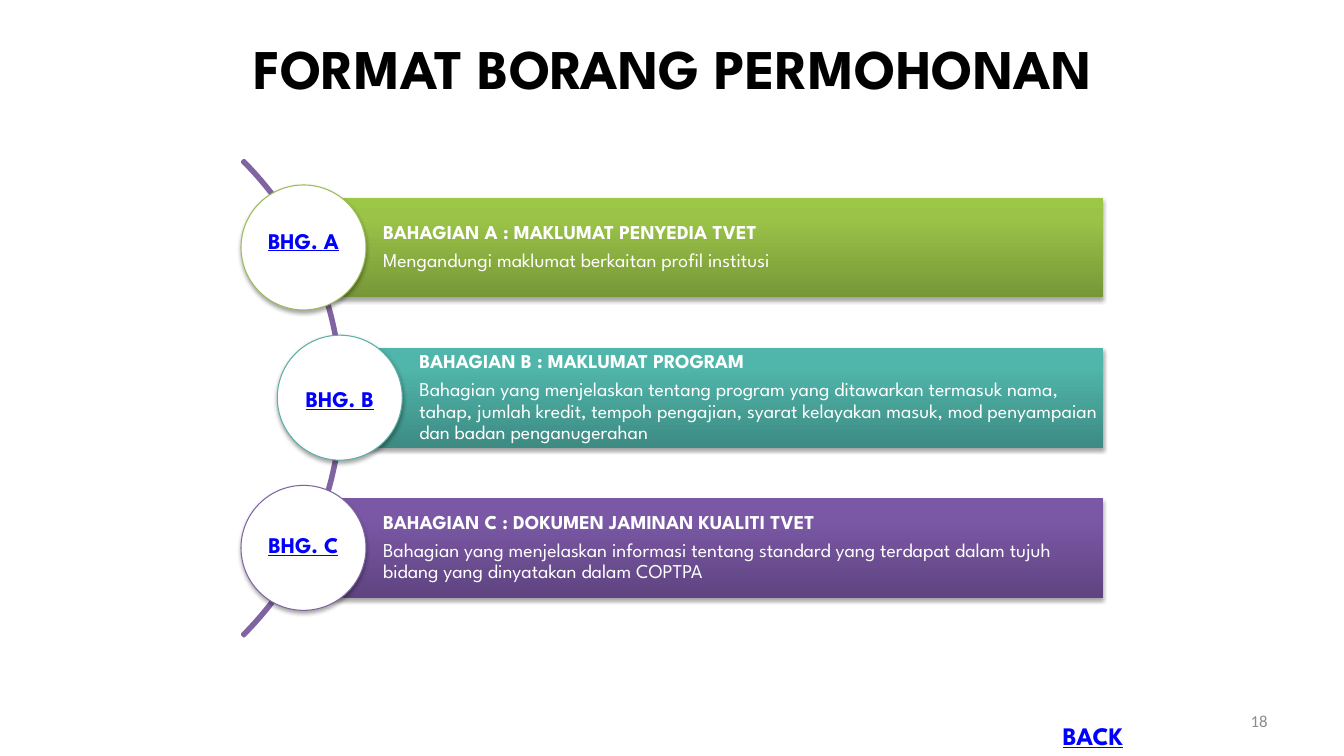
"""Build the slide that outlines the three parts of the application form."""
import copy

import pptx
import pptx.dml.color
import pptx.enum.shapes
import pptx.enum.text
import pptx.oxml
import pptx.oxml.ns
import pptx.util

SLIDE_WIDTH = pptx.util.Inches(13.33)
SLIDE_HEIGHT = pptx.util.Inches(7.5)
HEADING_FONT = "League Spartan"
COLOURS = {
    "black": "000000",
    "white": "FFFFFF",
    "link": "0000FF",
    "number": "8C8C8C",
    "arc": "8064A2",
}
SHAPE = pptx.enum.shapes.MSO_SHAPE
ALIGN = pptx.enum.text.PP_ALIGN
ANCHOR = pptx.enum.text.MSO_ANCHOR

BAR_RIGHT = 82.07
BAR_HEIGHT = 13.2
FIRST_MIDDLE = 32.73
ROW_PITCH = 19.87
CIRCLE_WIDTH, CIRCLE_HEIGHT = 9.3, 16.53
LABEL_WIDTH, LABEL_HEIGHT = 7.5, 6.27

SECTIONS = [
    {
        "label": "BHG. A",
        "heading": "BAHAGIAN A : MAKLUMAT PENYEDIA TVET",
        "detail": "Mengandungi maklumat berkaitan profil institusi",
        "left": 22.58,
        "label_middle": 31.8,
        "gradient": ["779737", "9BC348", "9DC746"],
        "outline": "9BBB59",
    },
    {
        "label": "BHG. B",
        "heading": "BAHAGIAN B : MAKLUMAT PROGRAM",
        "detail": "Bahagian yang menjelaskan tentang program yang ditawarkan "
                  "termasuk nama, tahap, jumlah kredit, tempoh pengajian, syarat "
                  "kelayakan masuk, mod penyampaian dan badan penganugerahan",
        "left": 25.28,
        "label_middle": 52.73,
        "gradient": ["3D8B83", "50B5AA", "4EB8AC"],
        "outline": "5EAFA6",
    },
    {
        "label": "BHG. C",
        "heading": "BAHAGIAN C : DOKUMEN JAMINAN KUALITI TVET",
        "detail": "Bahagian yang menjelaskan informasi tentang standard yang "
                  "terdapat dalam tujuh bidang yang dinyatakan dalam COPTPA",
        "left": 22.58,
        "label_middle": 72.07,
        "gradient": ["5F4480", "7B58A6", "7C57A8"],
        "outline": "8064A2",
    },
]


def rgb(value):
    """Turn a hex string into a colour."""
    return pptx.dml.color.RGBColor.from_string(value)


def place(left, top, width, height):
    """Turn percentages of the slide into a position and size."""
    return (int(SLIDE_WIDTH * left / 100), int(SLIDE_HEIGHT * top / 100),
            int(SLIDE_WIDTH * width / 100), int(SLIDE_HEIGHT * height / 100))


def format_runs(paragraph, size, colour, bold=False, underline=None, font=HEADING_FONT):
    """Format every run of a paragraph."""
    for run in paragraph.runs:
        run.font.name = font
        run.font.size = pptx.util.Pt(size)
        run.font.bold = bold
        run.font.underline = underline
        run.font.color.rgb = rgb(colour)


def add_shadow(shape):
    """Give a shape a soft shadow straight below it."""
    shape.shadow.inherit = False
    effects = shape._element.spPr.find(pptx.oxml.ns.qn("a:effectLst"))
    effects.append(pptx.oxml.parse_xml(
        f'<a:outerShdw {pptx.oxml.ns.nsdecls("a")} blurRad="39370" dist="22860" '
        f'dir="5400000" rotWithShape="0"><a:srgbClr val="{COLOURS["black"]}">'
        '<a:alpha val="35000"/></a:srgbClr></a:outerShdw>'))


def fill_gradient(shape, colours):
    """Fill a shape from bottom to top with three colours."""
    shape.fill.gradient()
    shape.fill.gradient_angle = 90
    stop_list = shape._element.spPr.find(".//" + pptx.oxml.ns.qn("a:gsLst"))
    stop_list.append(copy.deepcopy(stop_list[-1]))
    for stop, position, colour in zip(shape.fill.gradient_stops, (0, 0.8, 1), colours):
        stop.position = position
        stop.color.rgb = rgb(colour)


def add_title(slide, wording):
    """Fill the title placeholder."""
    title = slide.shapes.title
    title.left, title.top, title.width, title.height = place(12.53, 1.87, 75.02, 14.13)
    title.text_frame.text = wording
    title.text_frame.vertical_anchor = ANCHOR.MIDDLE
    heading = title.text_frame.paragraphs[0]
    heading.alignment = ALIGN.CENTER
    format_runs(heading, 40, COLOURS["black"], bold=True)


def add_text(slide, wording, box, align, anchor=ANCHOR.MIDDLE, wrap=True, **style):
    """Add one line of text."""
    frame = slide.shapes.add_textbox(*place(*box)).text_frame
    frame.word_wrap = wrap
    frame.vertical_anchor = anchor
    frame.text = wording
    frame.paragraphs[0].alignment = align
    format_runs(frame.paragraphs[0], **style)


def add_arc(slide):
    """Draw the curve that links the circles."""
    arc = slide.shapes.add_shape(SHAPE.BLOCK_ARC, *place(-24.61, 8.13, 50.11, 89.07))
    arc.shadow.inherit = False
    for index, value in enumerate((189, 27, 0.004)):
        arc.adjustments[index] = value
    arc.fill.background()
    arc.line.color.rgb = rgb(COLOURS["arc"])
    arc.line.width = pptx.util.Pt(2)


def add_bar(slide, section, middle):
    """Draw a section's bar with its heading and detail."""
    left = section["left"]
    bar = slide.shapes.add_shape(SHAPE.RECTANGLE, *place(
        left, middle - BAR_HEIGHT / 2, BAR_RIGHT - left, BAR_HEIGHT))
    fill_gradient(bar, section["gradient"])
    bar.line.fill.background()
    add_shadow(bar)
    frame = bar.text_frame
    frame.word_wrap = True
    frame.vertical_anchor = ANCHOR.MIDDLE
    frame.margin_left = pptx.util.Inches(0.79)
    frame.margin_top = frame.margin_right = frame.margin_bottom = pptx.util.Inches(0.04)
    frame.text = section["heading"] + "\n" + section["detail"]
    for paragraph, bold in zip(frame.paragraphs, (True, False)):
        paragraph.alignment = ALIGN.LEFT
        paragraph.line_spacing = 0.9
        paragraph.space_after = pptx.util.Pt(5)
        format_runs(paragraph, 14, COLOURS["white"], bold=bold)


def add_circle(slide, section, middle):
    """Draw the circle at the start of a section's bar."""
    circle = slide.shapes.add_shape(SHAPE.OVAL, *place(
        section["left"] - CIRCLE_WIDTH / 2, middle - CIRCLE_HEIGHT / 2,
        CIRCLE_WIDTH, CIRCLE_HEIGHT))
    circle.fill.solid()
    circle.fill.fore_color.rgb = rgb(COLOURS["white"])
    circle.line.color.rgb = rgb(section["outline"])
    circle.line.width = pptx.util.Pt(0.75)
    add_shadow(circle)


def main():
    """Build and save the slide."""
    deck = pptx.Presentation()
    deck.slide_width, deck.slide_height = SLIDE_WIDTH, SLIDE_HEIGHT
    slide = deck.slides.add_slide(deck.slide_layouts[5])
    add_title(slide, "FORMAT BORANG PERMOHONAN")
    add_text(slide, "18", (71.72, 92.67, 23.33, 5.33), ALIGN.RIGHT,
             size=12, colour=COLOURS["number"], font="Calibri")
    add_arc(slide)
    for row, section in enumerate(SECTIONS):
        middle = FIRST_MIDDLE + row * ROW_PITCH
        add_bar(slide, section, middle)
        add_circle(slide, section, middle)
        label_box = (section["left"] - LABEL_WIDTH / 2,
                     section["label_middle"] - LABEL_HEIGHT / 2,
                     LABEL_WIDTH, LABEL_HEIGHT)
        add_text(slide, section["label"], label_box, ALIGN.CENTER,
                 size=16, colour=COLOURS["link"], bold=True, underline=True)
    add_text(slide, "BACK", (78.32, 94.67, 6.68, 5.33), ALIGN.LEFT, ANCHOR.TOP,
             wrap=False, size=18, colour=COLOURS["link"], bold=True, underline=True)
    deck.save("out.pptx")


if __name__ == "__main__":
    main()
